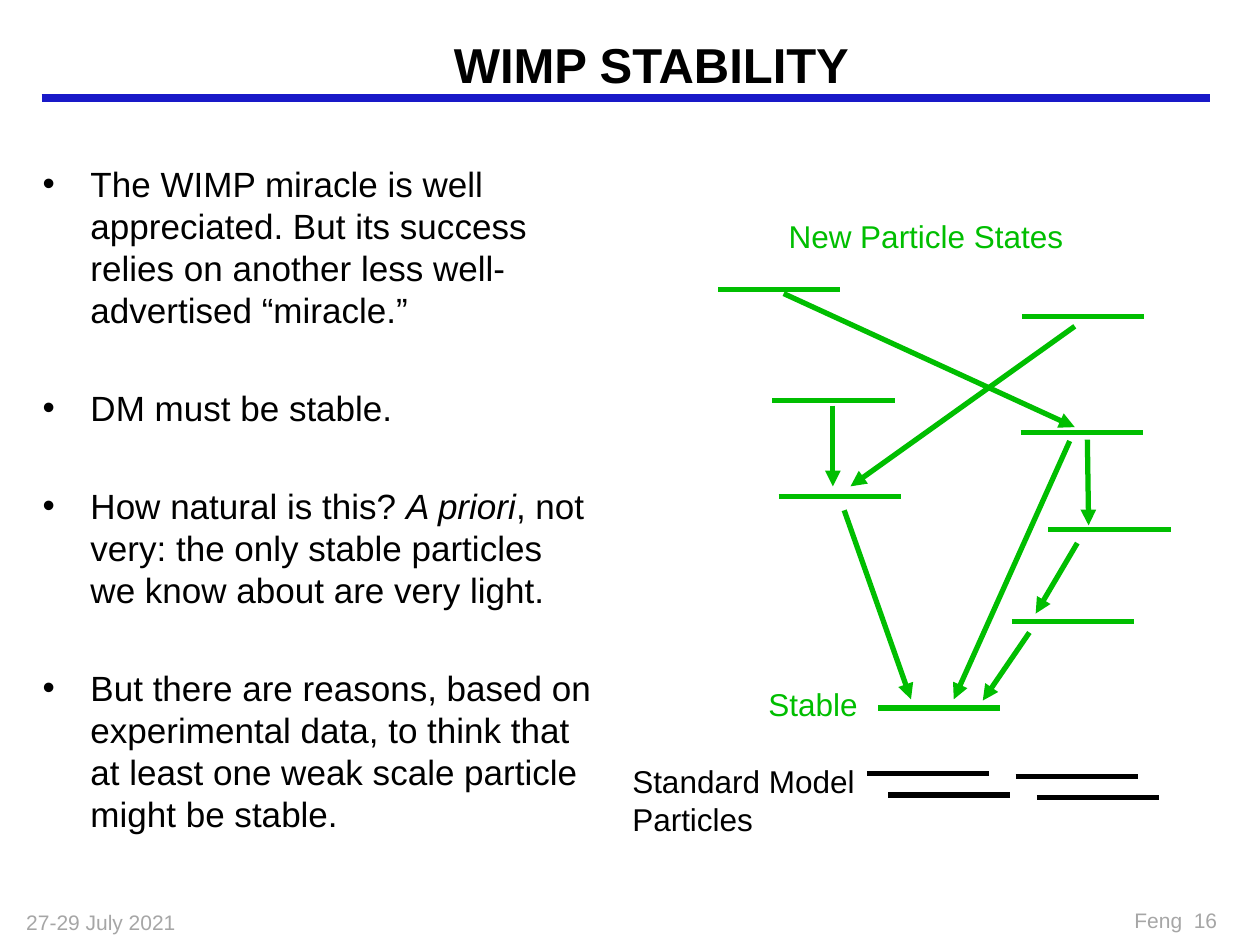
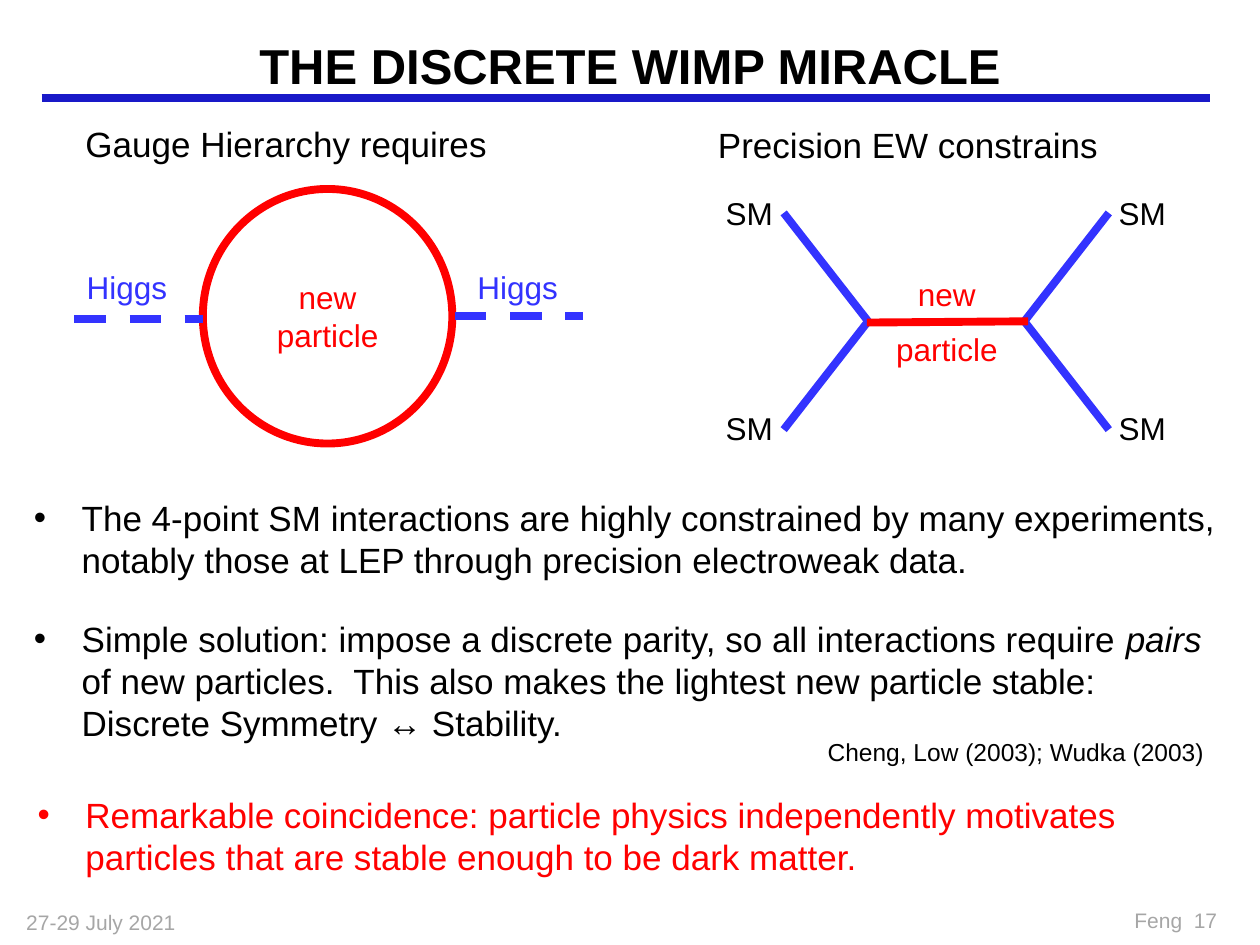
from pptx import Presentation
from pptx.dml.color import RGBColor
from pptx.enum.dml import MSO_LINE as Dash
from pptx.enum.shapes import MSO_CONNECTOR as Link, MSO_SHAPE as Form
from pptx.enum.text import MSO_ANCHOR as Anchor, MSO_AUTO_SIZE as Fit, PP_ALIGN as Align
from pptx.oxml.ns import qn
from pptx.util import Pt
from lxml.etree import SubElement

PX = 9144  # 100 px to the inch
BLACK, GREY, NAVY = "000000", "A6A6A6", "1919C8"
GREEN, RED, BLUE = "00BE00", "FF0000", "3333FF"


def write(shape, lines, size, hue=BLACK, align=Align.LEFT, gap=0, bullet=False):
    """Fill a shape with lines; *stars* mark italics, gap is in points."""
    frame = shape.text_frame
    frame.auto_size = Fit.NONE
    frame.word_wrap = bullet
    for i, line in enumerate(lines):
        para = frame.add_paragraph() if i else frame.paragraphs[0]
        if bullet:
            props = para._p.get_or_add_pPr()
            props.set("marL", str(38 * PX))
            props.set("indent", str(-38 * PX))
            SubElement(props, qn("a:buFont")).set("typeface", "Arial")
            SubElement(props, qn("a:buChar")).set("char", "•")
        para.alignment = align
        para.space_before = Pt(gap if i else 0)
        for k, part in enumerate(line.split("*")):
            run = para.add_run()
            run.text = part
            run.font.name = "Arial"
            run.font.size = Pt(size)
            run.font.italic = k % 2 == 1
            run.font.color.rgb = RGBColor.from_string(hue)


def draw(slide, ends, hue, width, dash=False, arrow=False):
    """Draw a straight line through ends = (x1, y1, x2, y2)."""
    link = slide.shapes.add_connector(Link.STRAIGHT, *[v * PX for v in ends])
    link.line.color.rgb = RGBColor.from_string(hue)
    link.line.width = Pt(width)
    if dash:
        link.line.dash_style = Dash.DASH
    props = link.element.spPr
    if arrow:
        SubElement(props.find(qn("a:ln")), qn("a:tailEnd")).set("type", "triangle")
    SubElement(props, qn("a:effectLst"))


deck = Presentation()
deck.slide_width, deck.slide_height = 1000 * PX, 750 * PX

# Title, rule and footers on both slides
heads = [
    ("WIMP STABILITY", (142, 27, 750, 48)),
    ("THE DISCRETE WIMP MIRACLE", (0, 20, 1000, 63)),
]
slides = []
for page, (head, area) in enumerate(heads, 16):
    slide = deck.slides.add_slide(deck.slide_layouts[5])
    slides.append(slide)
    title = slide.shapes.title
    title.left, title.top, title.width, title.height = [v * PX for v in area]
    write(title, [head], 28, align=Align.CENTER)
    title.text_frame.vertical_anchor = Anchor.MIDDLE
    title.text_frame.paragraphs[0].runs[0].font.bold = True
    draw(slide, (33, 78, 960, 78), NAVY, 4.5)
    for note, spot, align in [
        ("27-29 July 2021", (11, 717, 208, 31), Align.LEFT),
        (f"Feng  {page}", (768, 715, 208, 35), Align.RIGHT),
    ]:
        box = slide.shapes.add_textbox(*[v * PX for v in spot])
        write(box, [note], 12, GREY, align)
decay, parity = slides

# Bullets: slide, area, gap, colour, lines
for slide, area, gap, hue, lines in [
    (decay, (24, 124, 457, 533), 32, BLACK, [
        "The WIMP miracle is well appreciated. But its success relies on "
        "another less well-advertised “miracle.”",
        "DM must be stable.",
        "How natural is this? *A priori*, not very: the only stable particles "
        "we know about are very light.",
        "But there are reasons, based on experimental data, to think that "
        "at least one weak scale particle might be stable.",
    ]),
    (parity, (17, 389, 964, 219), 21, BLACK, [
        "The 4-point SM interactions are highly constrained by many "
        "experiments, notably those at LEP through precision electroweak data.",
        "Simple solution: impose a discrete parity, so all interactions "
        "require *pairs* of new particles.  This also makes the lightest new "
        "particle stable: Discrete Symmetry ↔ Stability.",
    ]),
    (parity, (20, 625, 964, 105), 0, RED, [
        "Remarkable coincidence: particle physics independently motivates "
        "particles that are stable enough to be dark matter.",
    ]),
]:
    box = slide.shapes.add_textbox(*[v * PX for v in area])
    write(box, lines, 20, hue, gap=gap, bullet=True)

# Energy levels: new states in green, known ones in black
fresh = [(570, 230), (811, 251), (613, 318), (810, 343), (618, 394),
         (832, 420), (803, 493), (697, 562)]
known = [(688, 614), (705, 631), (806, 616), (823, 633)]
for hue, spots in [(GREEN, fresh), (BLACK, known)]:
    for x, y in spots:
        draw(decay, (x, y, x + 97, y), hue, 3)

# Decay arrows
for ends in [
    (622, 233, 853, 339), (853, 259, 675, 386), (661, 322, 661, 386),
    (670, 405, 723, 555), (849, 350, 757, 555), (863, 349, 864, 417),
    (855, 431, 822, 487), (817, 502, 780, 556),
]:
    draw(decay, ends, GREEN, 3, arrow=True)

# Loop diagram
loop = parity.shapes.add_shape(Form.OVAL, *[v * PX for v in (161, 150, 198, 202)])
loop.shadow.inherit = False
loop.fill.background()
loop.line.color.rgb = RGBColor.from_string(RED)
loop.line.width = Pt(4.5)
loop.text_frame.vertical_anchor = Anchor.MIDDLE
write(loop, ["new", "particle"], 18, RED, Align.CENTER)
for x, y in [(59, 253), (361, 251)]:
    draw(parity, (x, y, x + 102, y), BLUE, 4.5, dash=True)

# Exchange diagram
for node, tip in [(689, 622), (813, 880)]:
    for y in (169, 341):
        draw(parity, (node, 255, tip, y), BLUE, 4.5)
draw(parity, (688, 256, 816, 255), RED, 4.5)

# Labels: slide, area, size, colour, lines
labels = [
    (decay, (616, 167, 238, 40), 18, GREEN, ["New Particle States"]),
    (decay, (600, 539, 91, 40), 18, GREEN, ["Stable"]),
    (decay, (492, 600, 197, 70), 18, BLACK, ["Standard Model", "Particles"]),
    (parity, (58, 92, 341, 44), 20, BLACK, ["Gauge Hierarchy requires"]),
    (parity, (560, 93, 324, 44), 20, BLACK, ["Precision EW constrains"]),
    (parity, (647, 580, 320, 34), 14, BLACK, ["Cheng, Low (2003); Wudka (2003)"]),
]
labels += [(parity, (x, 208, 84, 40), 18, BLUE, ["Higgs"]) for x in (59, 369)]
labels += [(parity, (x, y, 58, 40), 18, BLACK, ["SM"])
           for x in (566, 878) for y in (149, 320)]
for slide, area, size, hue, lines in labels:
    box = slide.shapes.add_textbox(*[v * PX for v in area])
    write(box, lines, size, hue)
box = parity.shapes.add_textbox(*[v * PX for v in (701, 213, 101, 84)])
write(box, ["new", "particle"], 18, RED, Align.CENTER, gap=10)

deck.save("out.pptx")
